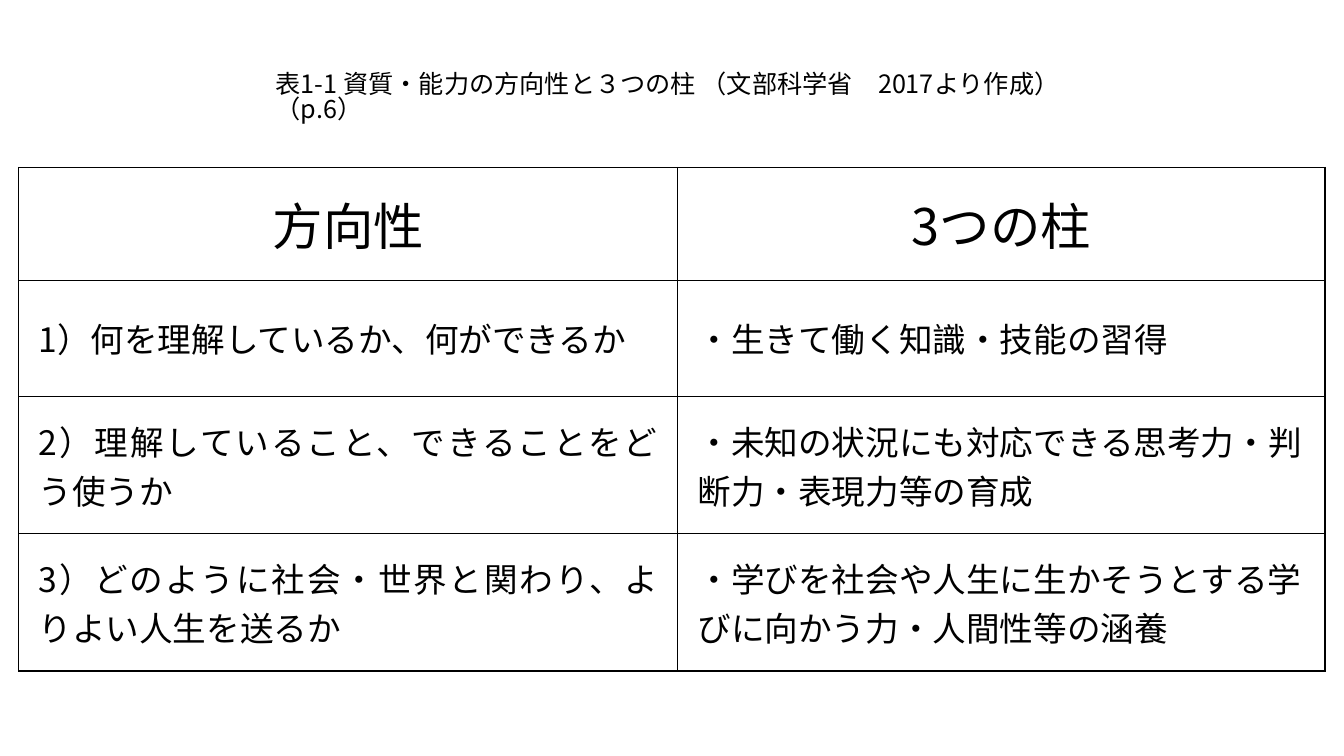
from lxml.etree import SubElement
from pptx import Presentation
from pptx.dml.color import RGBColor
from pptx.enum.text import MSO_ANCHOR, PP_ALIGN
from pptx.oxml.ns import qn
from pptx.util import Cm, Pt

CAPTION = "表1-1 資質・能力の方向性と３つの柱 （文部科学省　2017より作成）（p.6）"
ROWS = [
    ("方向性", "3つの柱"),
    ("1）何を理解しているか、何ができるか", "・生きて働く知識・技能の習得"),
    ("2）理解していること、できることをどう使うか",
     "・未知の状況にも対応できる思考力・判断力・表現力等の育成"),
    ("3）どのように社会・世界と関わり、よりよい人生を送るか",
     "・学びを社会や人生に生かそうとする学びに向かう力・人間性等の涵養"),
]
COLUMN_WIDTHS = [16.61, 16.31]
ROW_HEIGHTS = [2.84, 2.93, 3.46, 3.46]
COLUMN_ALIGN = [PP_ALIGN.JUSTIFY, PP_ALIGN.LEFT]
CELL_MARGIN = Cm(0.5)
FONT = "Noto Sans CJK JP"
COLORS = {"ink": "000000"}


def style_text(paragraph, size, align):
    paragraph.alignment = align
    for run in paragraph.runs:
        run.font.size = Pt(size)
        run.font.name = FONT
        run.font.color.rgb = RGBColor.from_string(COLORS["ink"])
        SubElement(run.font._element, qn("a:ea"), typeface=FONT)


def add_borders(cell):
    properties = cell._tc.get_or_add_tcPr()
    for side in ("a:lnL", "a:lnR", "a:lnT", "a:lnB"):
        line = SubElement(properties, qn(side), w=str(Pt(1)))
        fill = SubElement(line, qn("a:solidFill"))
        SubElement(fill, qn("a:srgbClr"), val=COLORS["ink"])


def add_caption(slide):
    caption = slide.shapes.add_textbox(Cm(6.7), Cm(1.73), Cm(22.4), Cm(1.02))
    caption.text_frame.word_wrap = True
    caption.text_frame.text = CAPTION
    paragraph = caption.text_frame.paragraphs[0]
    paragraph.line_spacing = 0.83
    style_text(paragraph, 18, PP_ALIGN.LEFT)


def add_pillars_table(slide):
    table = slide.shapes.add_table(
        len(ROWS), len(COLUMN_WIDTHS), Cm(0.47), Cm(4.22),
        Cm(sum(COLUMN_WIDTHS)), Cm(sum(ROW_HEIGHTS))).table
    table.horz_banding = False
    table.first_row = False
    for column, width in zip(table.columns, COLUMN_WIDTHS):
        column.width = Cm(width)
    for row, height in zip(table.rows, ROW_HEIGHTS):
        row.height = Cm(height)

    for r, texts in enumerate(ROWS):
        for c, text in enumerate(texts):
            cell = table.cell(r, c)
            cell.text_frame.text = text
            cell.margin_left = cell.margin_right = CELL_MARGIN
            cell.margin_top = cell.margin_bottom = CELL_MARGIN
            cell.vertical_anchor = MSO_ANCHOR.MIDDLE if r == 1 else MSO_ANCHOR.TOP
            add_borders(cell)
            cell.fill.background()
            is_header = r == 0
            style_text(cell.text_frame.paragraphs[0],
                       36 if is_header else 24,
                       PP_ALIGN.CENTER if is_header else COLUMN_ALIGN[c])


def main():
    presentation = Presentation()
    presentation.slide_width = Cm(33.87)
    presentation.slide_height = Cm(19.05)
    slide = presentation.slides.add_slide(presentation.slide_layouts[6])
    add_pillars_table(slide)
    add_caption(slide)
    presentation.save("out.pptx")


if __name__ == "__main__":
    main()
